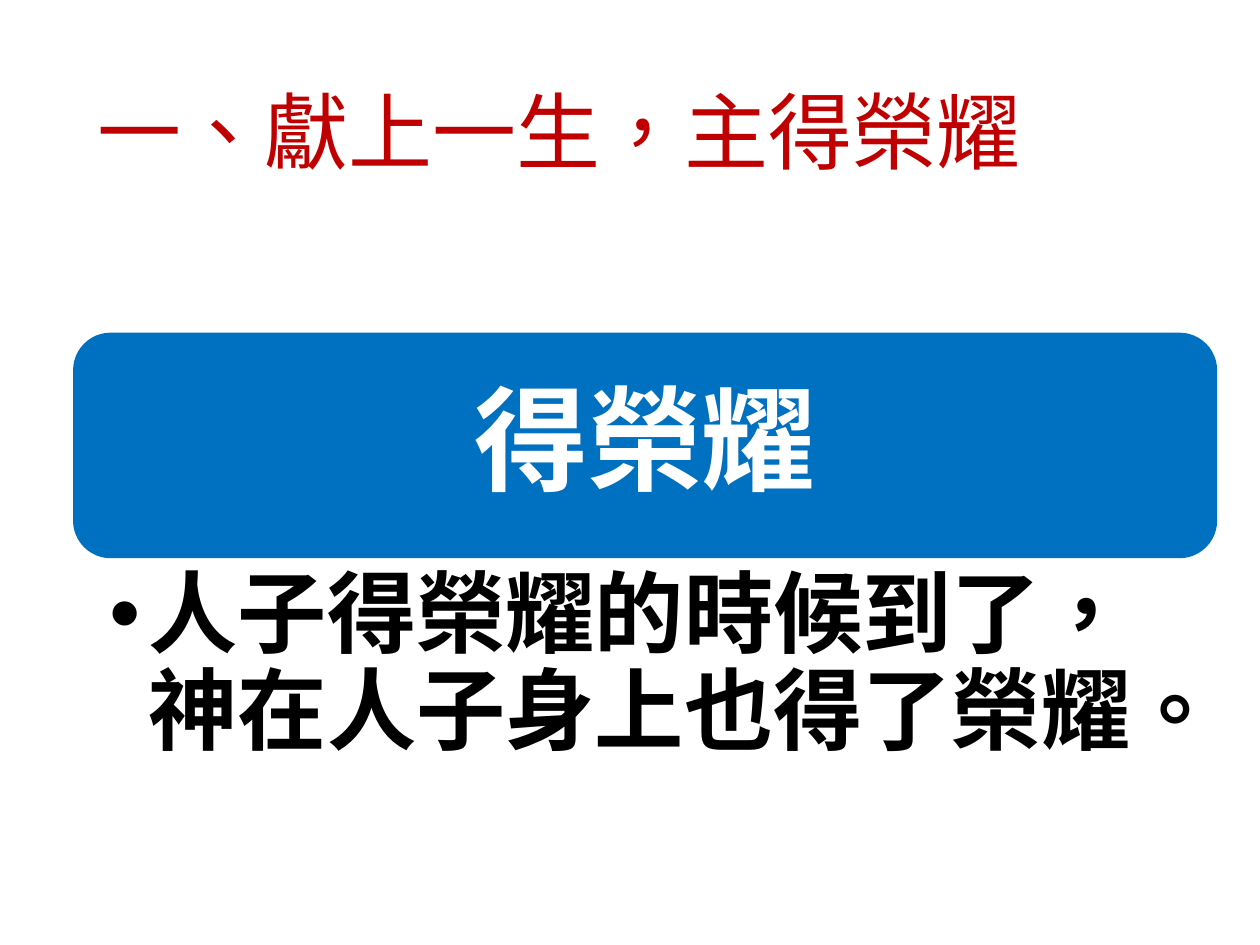
from collections import namedtuple
from dataclasses import dataclass

from lxml.etree import SubElement
from pptx import Presentation
from pptx.dml.color import RGBColor
from pptx.enum.lang import MSO_LANGUAGE_ID as Language
from pptx.enum.shapes import MSO_SHAPE as Shape
from pptx.enum.text import MSO_ANCHOR as Anchor, MSO_AUTO_SIZE as AutoSize, PP_ALIGN as Align
from pptx.oxml.ns import qn
from pptx.util import Inches, Pt

Box = namedtuple("Box", "left top width height")


@dataclass(frozen=True)
class Theme:
    red: str = "C00000"
    blue: str = "0070C0"
    white: str = "FFFFFF"
    black: str = "000000"
    title_font: str = "Roboto"
    body_font: str = "Noto Sans CJK SC"
    title_size: int = 48
    banner_size: int = 65
    verse_size: int = 51


THEME = Theme()
WIDTH, HEIGHT = 10, 7.5
# The banner and the verse share one column and meet at one edge
COLUMN_LEFT, COLUMN_WIDTH = 0.58, 9.08
BANNER_TOP, BANNER_HEIGHT, VERSE_HEIGHT = 2.64, 1.79, 1.84
TITLE_BOX = Box(0.67, 0.58, 7.61, 0.91)
BANNER_BOX = Box(COLUMN_LEFT, BANNER_TOP, COLUMN_WIDTH, BANNER_HEIGHT)
VERSE_BOX = Box(COLUMN_LEFT, BANNER_TOP + BANNER_HEIGHT, COLUMN_WIDTH, VERSE_HEIGHT)


def place(shape, box):
    shape.left, shape.top, shape.width, shape.height = map(Inches, box)


def write(shape, text, *, font, size, color, bold=False, align=Align.LEFT,
          anchor=Anchor.TOP, insets=(0.1, 0.05, 0.1, 0.05), wrap=True,
          line_spacing=1.0, space_after=0):
    """Fill the shape with one formatted paragraph and return it."""
    frame = shape.text_frame
    frame.auto_size = AutoSize.NONE
    frame.word_wrap = wrap
    frame.vertical_anchor = anchor
    (frame.margin_left, frame.margin_top,
     frame.margin_right, frame.margin_bottom) = map(Inches, insets)
    paragraph = frame.paragraphs[0]
    paragraph.alignment = align
    paragraph.line_spacing = line_spacing
    paragraph.space_before = Pt(0)
    paragraph.space_after = Pt(space_after)
    run = paragraph.add_run()
    run.text = text
    run.font.name = font
    run.font.size = Pt(size)
    run.font.bold = bold
    run.font.color.rgb = RGBColor.from_string(color)
    run.font.language_id = Language.TRADITIONAL_CHINESE
    # East Asian characters use the same typeface
    properties = run.font._element
    east_asian = SubElement(properties, qn("a:ea"), typeface=font)
    properties.find(qn("a:latin")).addnext(east_asian)
    return paragraph


def add_bullet(paragraph, indent):
    properties = paragraph._p.get_or_add_pPr()
    properties.set("marL", str(Inches(indent)))
    properties.set("indent", str(-Inches(indent)))
    SubElement(properties, qn("a:buChar"), char="•")


def build_title(slide, box):
    title = slide.shapes.title
    place(title, box)
    write(title, "一、獻上一生，主得榮耀", font=THEME.title_font,
          size=THEME.title_size, color=THEME.red, wrap=False)


def build_banner(slide, box):
    banner = slide.shapes.add_shape(Shape.ROUNDED_RECTANGLE, *map(Inches, box))
    banner.shadow.inherit = False
    banner.fill.solid()
    banner.fill.fore_color.rgb = RGBColor.from_string(THEME.blue)
    banner.line.fill.background()
    write(banner, "得榮耀", font=THEME.body_font, size=THEME.banner_size,
          color=THEME.white, bold=True, align=Align.CENTER,
          anchor=Anchor.MIDDLE, insets=(0.27,) * 4, line_spacing=0.9)


def build_verse(slide, box):
    verse = slide.placeholders[1]
    place(verse, box)
    paragraph = write(verse, "人子得榮耀的時候到了，神在人子身上也得了榮耀。",
                      font=THEME.body_font, size=THEME.verse_size,
                      color=THEME.black, bold=True,
                      insets=(0.29, 0.09, 0.51, 0.09),
                      line_spacing=0.9, space_after=10)
    paragraph.level = 1
    add_bullet(paragraph, 0.31)


def main():
    presentation = Presentation()
    presentation.slide_width = Inches(WIDTH)
    presentation.slide_height = Inches(HEIGHT)
    slide = presentation.slides.add_slide(presentation.slide_layouts[1])
    build_title(slide, TITLE_BOX)
    build_banner(slide, BANNER_BOX)
    build_verse(slide, VERSE_BOX)
    presentation.save("out.pptx")


if __name__ == "__main__":
    main()
